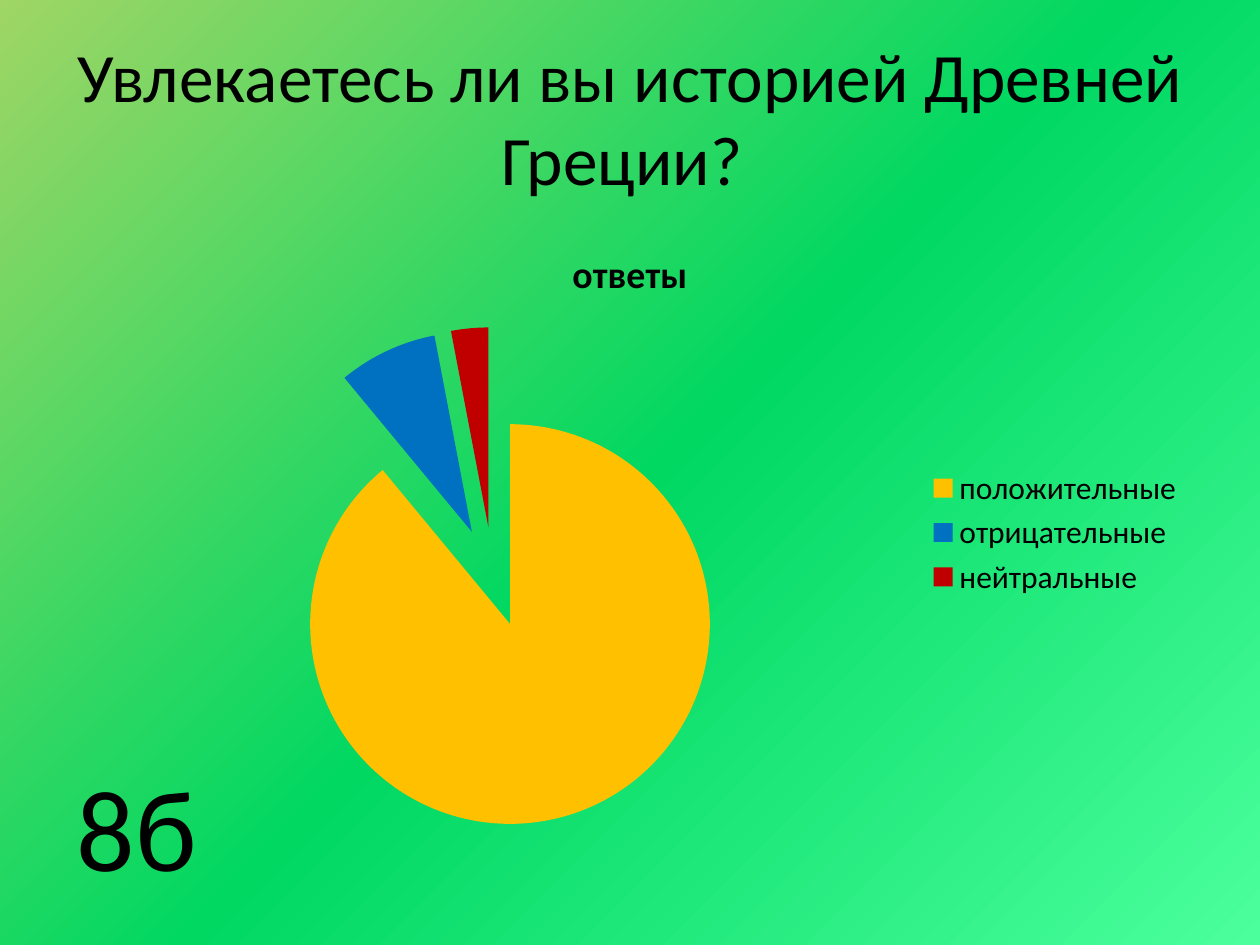
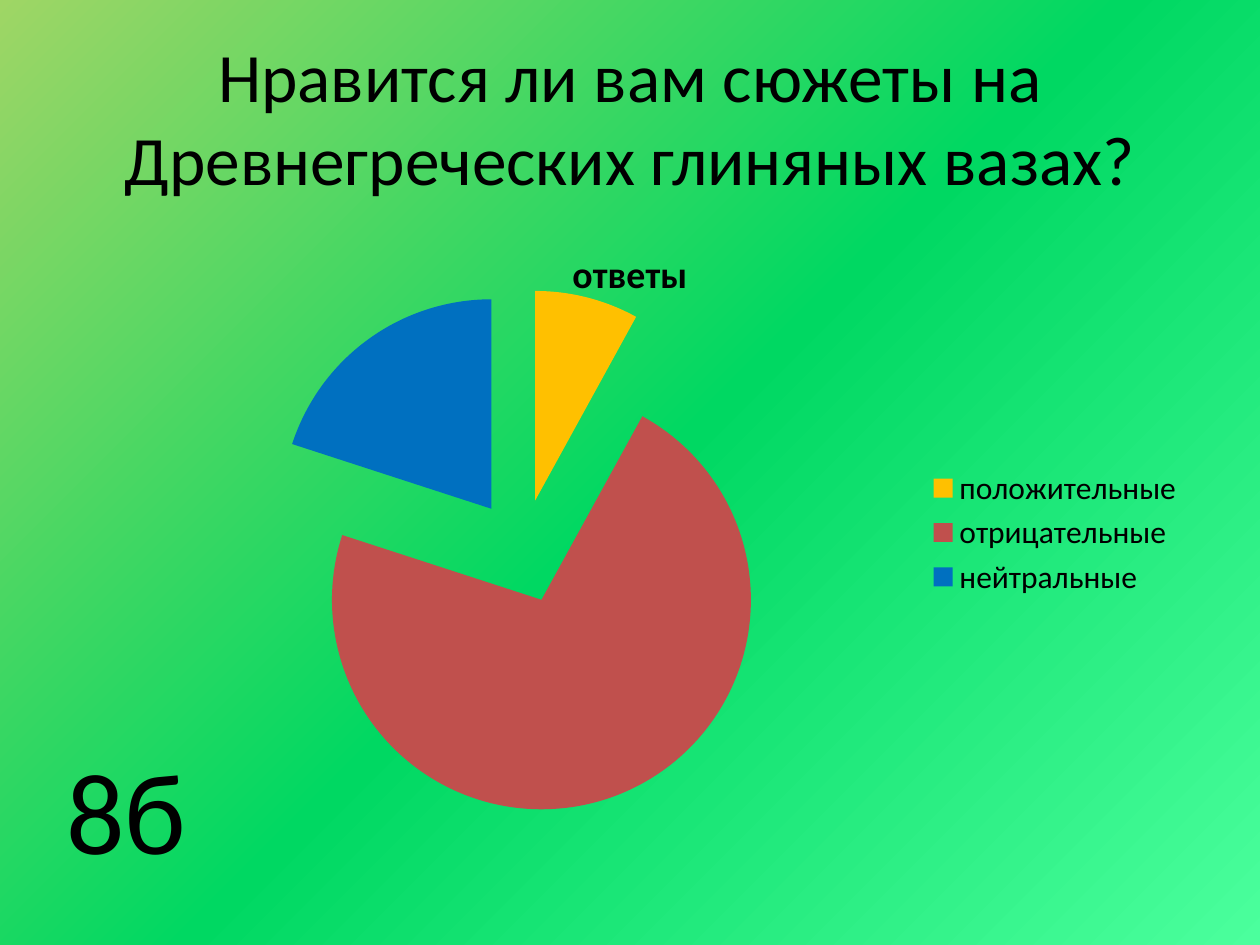
"""Build two survey slides, each with a question, a pie chart of answers and a class label."""
import copy

import lxml.etree
import pptx
import pptx.chart.data
import pptx.dml.color
import pptx.enum.chart
import pptx.enum.text
import pptx.oxml.ns
import pptx.util

Cm = pptx.util.Cm
Pt = pptx.util.Pt
qn = pptx.oxml.ns.qn

COLOURS = {
    "olive": "9FD665",
    "green": "00D862",
    "mint": "4BFF9D",
    "text": "000000",
    "yellow": "FFC000",
    "blue": "0070C0",
    "red": "C00000",
    "brick": "C0504D",
}
FONT = "Calibri"
BACKGROUND = [("olive", 0), ("green", 0.51), ("mint", 1)]
QUESTION_BOX = (1.27, 0.76, 22.86, 3.18)
CHART_BOX = (1.27, 4.45, 22.86, 12.57)
ANSWERS = ["положительные", "отрицательные", "нейтральные"]
EXPLOSION = 25

SURVEYS = [
    {
        "question": "Увлекаетесь ли вы историей Древней Греции? ",
        "shares": (89, 8, 3),
        "slices": ("yellow", "blue", "red"),
        "plot": None,
        "class_box": (1.3, 15.11, 2.95, 3.07),
        "wrap": False,
    },
    {
        "question": "Нравится ли вам сюжеты на Древнегреческих глиняных вазах?",
        "shares": (8, 72, 20),
        "slices": ("yellow", "brick", "blue"),
        "plot": {"x": 0.04, "y": 0.11, "w": 0.73, "h": 0.84},
        "class_box": (1.09, 14.78, 4.6, 3.07),
        "wrap": True,
    },
]


def colour(name):
    """Return the named colour as an RGB value."""
    return pptx.dml.color.RGBColor.from_string(COLOURS[name])


def lengths(box):
    """Return the box in centimetre lengths."""
    return [Cm(length) for length in box]


def apply(target, formats):
    """Set each attribute of the target from a dict."""
    for attribute, value in formats.items():
        setattr(target, attribute, value)


def format_font(font, size, bold=False):
    """Give a font the shared face and colour."""
    apply(font, {"name": FONT, "size": Pt(size), "bold": bold})
    font.color.rgb = colour("text")


def paint_background(master):
    """Fill the master with the diagonal three-colour gradient."""
    fill = master.background.fill
    fill.gradient()
    fill.gradient_angle = 315
    first_stop = next(master.element.iter(qn("a:gs")))
    first_stop.addnext(copy.deepcopy(first_stop))
    for stop, (name, position) in zip(fill.gradient_stops, BACKGROUND):
        stop.color.rgb = colour(name)
        stop.position = position


def add_question(slide, box, question):
    """Put the question in the title placeholder."""
    title = slide.shapes.title
    apply(title, dict(zip(("left", "top", "width", "height"), lengths(box))))
    frame = title.text_frame
    frame.text = question
    apply(frame, {
        "word_wrap": True,
        "auto_size": pptx.enum.text.MSO_AUTO_SIZE.NONE,
        "vertical_anchor": pptx.enum.text.MSO_ANCHOR.MIDDLE,
    })
    paragraph = frame.paragraphs[0]
    paragraph.alignment = pptx.enum.text.PP_ALIGN.CENTER
    format_font(paragraph.runs[0].font, 39.6)


def explode_slices(series):
    """Move all slices of the series away from the centre."""
    explosion = lxml.etree.Element(qn("c:explosion"), val=str(EXPLOSION))
    series._element.find(qn("c:tx")).addnext(explosion)


def place_plot(chart, plot_box):
    """Fix the inner plot area as fractions of the chart."""
    plot_area = chart._chartSpace.find(".//" + qn("c:plotArea"))
    for automatic in plot_area.findall(qn("c:layout")):
        plot_area.remove(automatic)
    layout = lxml.etree.Element(qn("c:layout"))
    manual = lxml.etree.SubElement(layout, qn("c:manualLayout"))
    settings = {"layoutTarget": "inner", "xMode": "edge", "yMode": "edge", **plot_box}
    for tag, value in settings.items():
        lxml.etree.SubElement(manual, qn("c:" + tag), val=str(value))
    plot_area.insert(0, layout)


def add_answers(slide, box, shares, slices, plot_box):
    """Add the pie chart of answers with its title and legend."""
    answers = pptx.chart.data.CategoryChartData()
    answers.categories = ANSWERS
    answers.add_series("ответы", shares)
    chart = slide.shapes.add_chart(
        pptx.enum.chart.XL_CHART_TYPE.PIE, *lengths(box), answers).chart
    format_font(chart.font, 18)

    chart.has_title = True
    heading = chart.chart_title.text_frame
    heading.text = "ответы"
    format_font(heading.paragraphs[0].runs[0].font, 21.6, bold=True)

    chart.has_legend = True
    apply(chart.legend, {
        "position": pptx.enum.chart.XL_LEGEND_POSITION.RIGHT,
        "include_in_layout": False,
    })
    format_font(chart.legend.font, 18)

    pie = chart.plots[0]
    pie.vary_by_categories = True
    series = pie.series[0]
    for index, name in enumerate(slices):
        fill = series.points[index].format.fill
        fill.solid()
        fill.fore_color.rgb = colour(name)
    explode_slices(series)
    if plot_box:
        place_plot(chart, plot_box)


def add_class_label(slide, box, wrap):
    """Add the large label of the class that was asked."""
    frame = slide.shapes.add_textbox(*lengths(box)).text_frame
    frame.text = "8б"
    apply(frame, {
        "word_wrap": wrap,
        "auto_size": pptx.enum.text.MSO_AUTO_SIZE.SHAPE_TO_FIT_TEXT,
    })
    format_font(frame.paragraphs[0].runs[0].font, 66)


def add_survey_slide(deck, survey):
    """Add one slide with a question, its answers and the class."""
    slide = deck.slides.add_slide(deck.slide_layouts.get_by_name("Title Only"))
    add_question(slide, QUESTION_BOX, survey["question"])
    add_answers(slide, CHART_BOX, survey["shares"], survey["slices"], survey["plot"])
    add_class_label(slide, survey["class_box"], survey["wrap"])


def main():
    """Build and save the deck."""
    deck = pptx.Presentation()
    apply(deck, {"slide_width": Cm(25.4), "slide_height": Cm(19.05)})
    paint_background(deck.slide_master)
    for survey in SURVEYS:
        add_survey_slide(deck, survey)
    deck.save("out.pptx")


if __name__ == "__main__":
    main()
